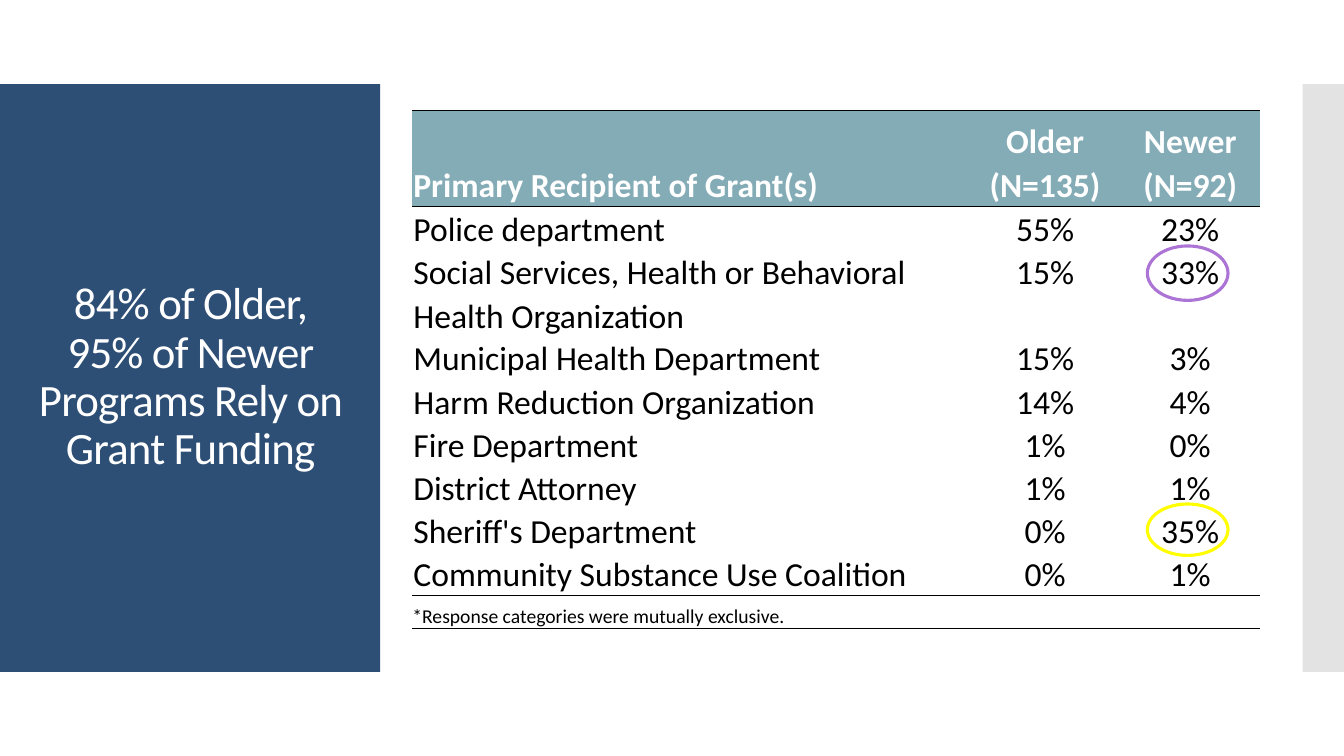
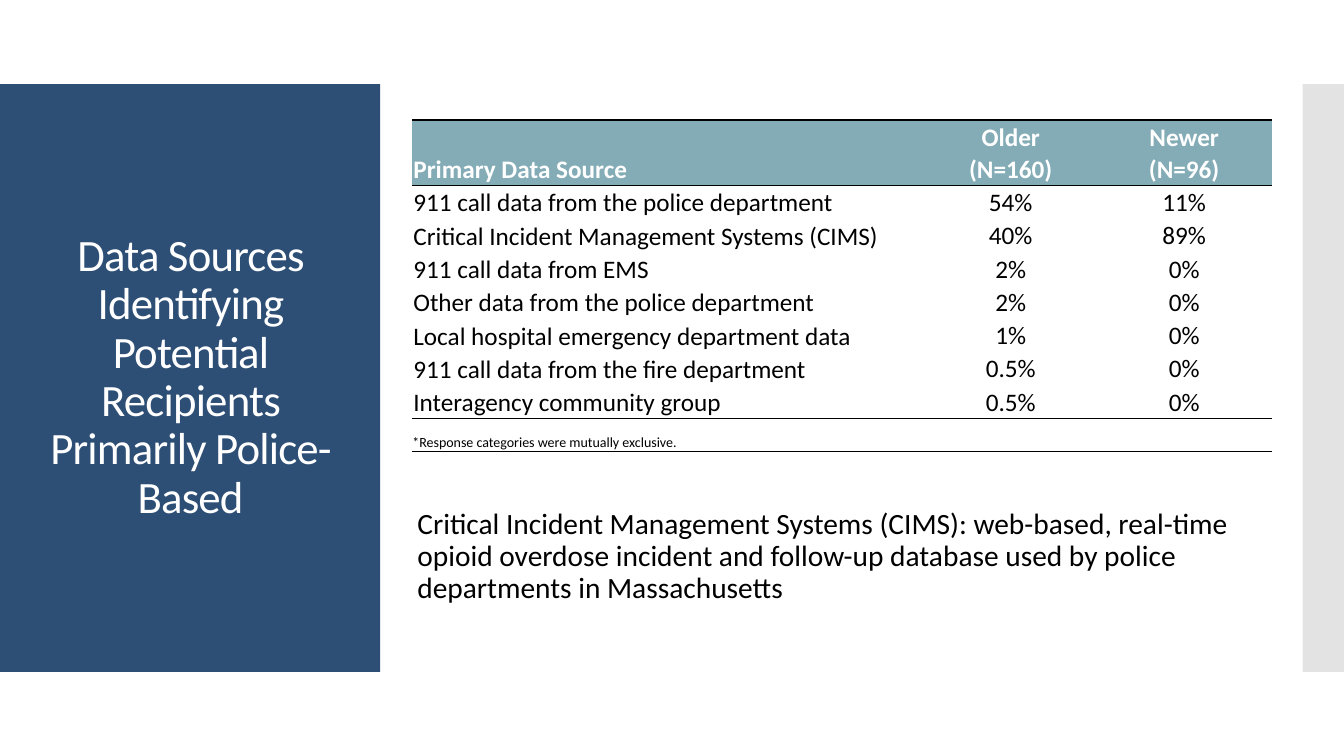
from dataclasses import dataclass

import pptx
import pptx.dml.color
import pptx.enum.shapes
import pptx.enum.text
import pptx.oxml.ns
import pptx.util
from lxml import etree

Inches = pptx.util.Inches
Pt = pptx.util.Pt
Align = pptx.enum.text.PP_ALIGN
Anchor = pptx.enum.text.MSO_ANCHOR
Shape = pptx.enum.shapes.MSO_SHAPE
qn = pptx.oxml.ns.qn


@dataclass(frozen=True)
class Theme:
    font: str = "Calibri"
    panel: str = "2D4E75"
    side_band: str = "C8C8C8"
    header: str = "84ACB6"
    light: str = "FFFFFF"
    dark: str = "000000"
    purple: str = "AC75D5"
    yellow: str = "FFFF00"
    title_size: int = 32
    caption_size: int = 21
    title_spacing: float = 0.9
    table_spacing: float = 1.07
    rule_width: float = 1
    ring_width: float = 2.25


@dataclass(frozen=True)
class Box:
    """A rectangle in inches."""
    left: float
    top: float
    width: float
    height: float

    def inner(self, left, top, width, height):
        return Box(self.left + left, self.top + top, width, height)

    def emu(self):
        return [Inches(n) for n in (self.left, self.top, self.width, self.height)]


@dataclass(frozen=True)
class TableStyle:
    columns: tuple
    header_height: float
    row_height: float
    size: int
    note_size: int


THEME = Theme()
PAGE = Box(0, 0, 13.33, 7.5)
ROW = PAGE.height / 9
PANEL = Box(0, ROW, 3.77, 7 * ROW)
SIDE_BAND = Box(12.92, ROW, PAGE.width - 12.92, 7 * ROW)
CONTENT_LEFT = 4.09
NOTE = "*Response categories were mutually exclusive."


def rgb(value):
    return pptx.dml.color.RGBColor.from_string(value)


def add_run(paragraph, text, size, color, bold=False):
    run = paragraph.add_run()
    run.text = text
    run.font.name = THEME.font
    run.font.size = Pt(size)
    run.font.bold = bold
    run.font.color.rgb = rgb(color)
    return run


def add_band(slide, box, color, opacity=100):
    band = slide.shapes.add_shape(Shape.RECTANGLE, *box.emu())
    band.shadow.inherit = False
    band.fill.solid()
    band.fill.fore_color.rgb = rgb(color)
    band.line.fill.background()
    if opacity < 100:
        color_element = band._element.spPr.find(".//" + qn("a:srgbClr"))
        etree.SubElement(color_element, qn("a:alpha"), val=str(opacity * 1000))


def add_ring(slide, box, color):
    ring = slide.shapes.add_shape(Shape.OVAL, *box.emu())
    ring.shadow.inherit = False
    ring.fill.background()
    ring.line.color.rgb = rgb(color)
    ring.line.width = Pt(THEME.ring_width)


def add_text(slide, box, text, size, color, align):
    text_box = slide.shapes.add_textbox(*box.emu())
    frame = text_box.text_frame
    frame.word_wrap = True
    frame.vertical_anchor = Anchor.MIDDLE
    frame.margin_left = frame.margin_right = Inches(0.05)
    frame.margin_top = frame.margin_bottom = Inches(0.05)
    paragraph = frame.paragraphs[0]
    paragraph.alignment = align
    paragraph.line_spacing = THEME.title_spacing
    return add_run(paragraph, text, size, color)


def set_borders(cell, ruled_edges):
    properties = cell._tc.get_or_add_tcPr()
    for edge in "LRTB":
        line = etree.SubElement(properties, qn("a:ln" + edge))
        if edge in ruled_edges:
            line.set("w", str(Pt(THEME.rule_width)))
            fill = etree.SubElement(line, qn("a:solidFill"))
            etree.SubElement(fill, qn("a:srgbClr"), val=THEME.dark)
        else:
            etree.SubElement(line, qn("a:noFill"))


def fill_cell(cell, text, size, align, anchor, ruled_edges, header=False, inset=0.01):
    cell.margin_left = cell.margin_right = Inches(inset)
    cell.margin_top = cell.margin_bottom = 0
    cell.vertical_anchor = anchor
    set_borders(cell, ruled_edges)
    if header:
        cell.fill.solid()
        cell.fill.fore_color.rgb = rgb(THEME.header)
    else:
        cell.fill.background()
    frame = cell.text_frame
    for index, line in enumerate(text.split("\n")):
        paragraph = frame.add_paragraph() if index else frame.paragraphs[0]
        paragraph.alignment = align
        paragraph.line_spacing = THEME.table_spacing
        add_run(paragraph, line, size, THEME.light if header else THEME.dark, header)


def add_data_table(slide, box, rows, style):
    """Header row, data rows, then one note across all columns."""
    note_row = len(rows)
    frame = slide.shapes.add_table(note_row + 1, len(style.columns), *box.emu())
    table = frame.table
    table.first_row = table.horz_banding = False
    for column, width in zip(table.columns, style.columns):
        column.width = Inches(width)
    for row in table.rows:
        row.height = Inches(style.row_height)
    table.rows[0].height = Inches(style.header_height)
    table.rows[note_row].height = Inches(0.33)

    for row_index, row in enumerate(rows):
        header = row_index == 0
        edges = "TB" if header else "T" if row_index == 1 else ""
        if row_index == note_row - 1:
            edges += "B"
        for column_index, text in enumerate(row):
            label = column_index == 0
            fill_cell(table.cell(row_index, column_index), text, style.size,
                      Align.LEFT if label else Align.CENTER,
                      Anchor.BOTTOM if label or header else Anchor.TOP,
                      edges, header)

    note_cell = table.cell(note_row, 0)
    note_cell.merge(table.cell(note_row, len(style.columns) - 1))
    fill_cell(note_cell, NOTE, style.note_size, Align.LEFT, Anchor.BOTTOM, "TB", inset=0)
    for column_index in range(1, len(style.columns)):
        set_borders(table.cell(note_row, column_index), "TB")


def add_titled_slide(presentation, title):
    slide = presentation.slides.add_slide(presentation.slide_layouts[6])
    add_band(slide, PANEL, THEME.panel)
    add_band(slide, SIDE_BAND, THEME.side_band, opacity=50)
    title_box = PANEL.inner(0.28, 0.4, 3.22, 5.03)
    run = add_text(slide, title_box, title, THEME.title_size, THEME.light, Align.CENTER)
    run._r.get_or_add_rPr().set("spc", "-60")
    return slide


def add_grant_slide(presentation):
    slide = add_titled_slide(
        presentation, "84% of Older, 95% of Newer Programs Rely on Grant Funding")
    rows = [
        ("Primary Recipient of Grant(s)", "Older\n(N=135)", "Newer\n(N=92)"),
        ("Police department", "55%", "23%"),
        ("Social Services, Health or Behavioral Health Organization", "15%", "33%"),
        ("Municipal Health Department", "15%", "3%"),
        ("Harm Reduction Organization", "14%", "4%"),
        ("Fire Department", "1%", "0%"),
        ("District Attorney", "1%", "1%"),
        ("Sheriff's Department", "0%", "35%"),
        ("Community Substance Use Coalition", "0%", "1%"),
    ]
    style = TableStyle((5.53, 1.49, 1.39), 0.95, 0.4, 24, 14)
    table_box = Box(CONTENT_LEFT, 1.1, sum(style.columns), 5.13)
    add_data_table(slide, table_box, rows, style)
    add_ring(slide, table_box.inner(7.29, 1.34, 0.8, 0.54), THEME.purple)
    add_ring(slide, table_box.inner(7.29, 3.9, 0.8, 0.51), THEME.yellow)


def add_data_source_slide(presentation):
    slide = add_titled_slide(
        presentation, "Data Sources Identifying Potential Recipients Primarily Police-Based")
    rows = [
        ("Primary Data Source", "Older\n(N=160)", "Newer\n(N=96)"),
        ("911 call data from the police department", "54%", "11%"),
        ("Critical Incident Management Systems (CIMS)", "40%", "89%"),
        ("911 call data from EMS", "2%", "0%"),
        ("Other data from the police department", "2%", "0%"),
        ("Local hospital emergency department data", "1%", "0%"),
        ("911 call data from the fire department", "0.5%", "0%"),
        ("Interagency community group", "0.5%", "0%"),
    ]
    style = TableStyle((5.09, 1.69, 1.75), 0.65, 0.33, 18, 10)
    table_box = Box(CONTENT_LEFT, 1.19, sum(style.columns), 3.28)
    add_data_table(slide, table_box, rows, style)
    add_text(slide, table_box.inner(0, 3.78, table_box.width, 1.11),
             "Critical Incident Management Systems (CIMS): web-based, real-time opioid "
             "overdose incident and follow-up database used by police departments in "
             "Massachusetts", THEME.caption_size, THEME.dark, Align.LEFT)


def main():
    presentation = pptx.Presentation()
    presentation.slide_width = Inches(PAGE.width)
    presentation.slide_height = Inches(PAGE.height)
    add_grant_slide(presentation)
    add_data_source_slide(presentation)
    presentation.save("out.pptx")


if __name__ == "__main__":
    main()
